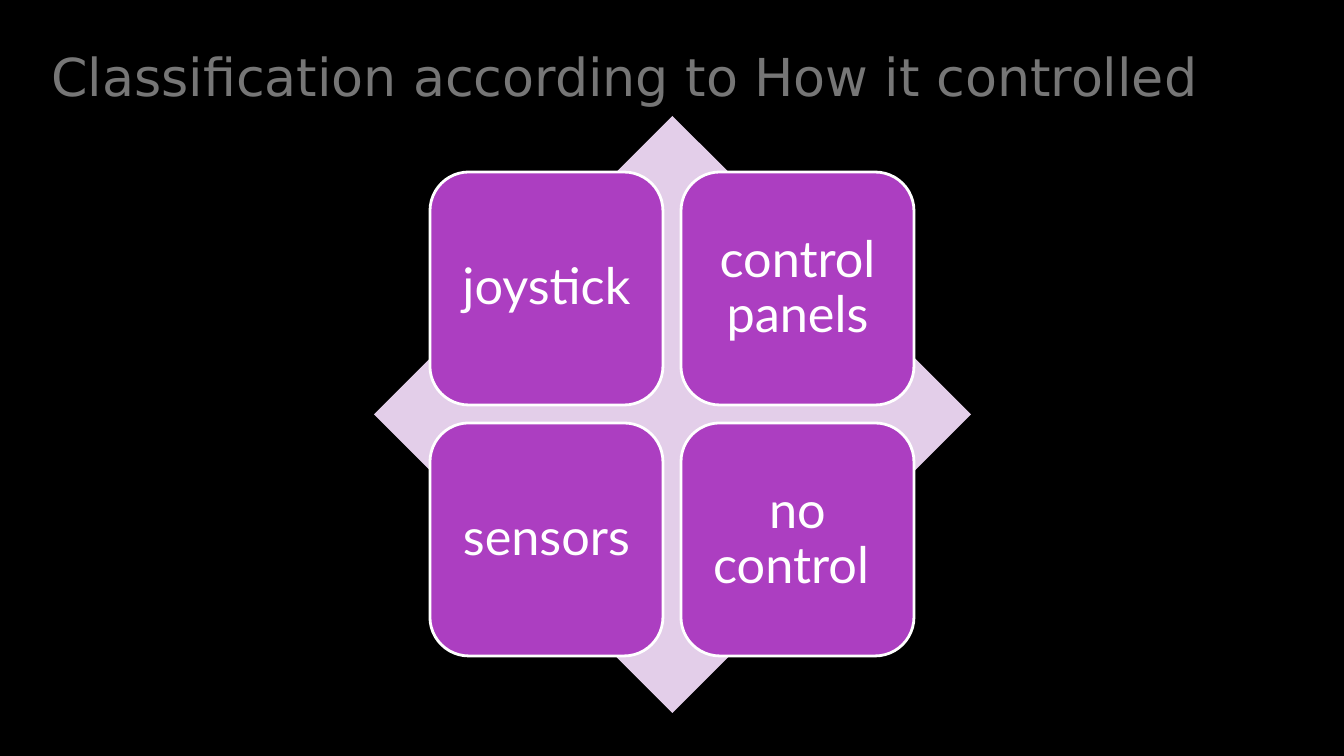
from pptx import Presentation
from pptx.dml.color import RGBColor
from pptx.enum.shapes import MSO_SHAPE as Kind
from pptx.enum.text import MSO_ANCHOR as Anchor, PP_ALIGN as Align
from pptx.util import Emu, Pt

SCALE = 914400 / 134.4
COLORS = {
    "back": "000000",
    "title": "767676",
    "diamond": "E3CEE9",
    "tile": "AC3EC1",
    "white": "FFFFFF",
}
LABELS = ["joystick", "control panels", "sensors", "no control "]
LEFT, TOP, SIDE, STEP = 430, 172, 233, 251


def px(count):
    return Emu(round(count * SCALE))


def color(name):
    return RGBColor.from_string(COLORS[name])


def style(run, font, size, tone):
    run.font.name = font
    run.font.size = Pt(size)
    run.font.color.rgb = color(tone)


def add_title(slide, text):
    box = slide.shapes.add_textbox(px(24), px(34), px(1215), px(82))
    box.text_frame.word_wrap = True
    para = box.text_frame.paragraphs[0]
    for part, font, size in ((" ", "Lato", 30), (text, "DejaVu Sans", 28)):
        run = para.add_run()
        run.text = part
        style(run, font, size, "title")


def add_block(slide, kind, left, top, side, tone):
    block = slide.shapes.add_shape(kind, px(left), px(top), px(side), px(side))
    block.shadow.inherit = False
    block.fill.solid()
    block.fill.fore_color.rgb = color(tone)
    block.line.fill.background()
    return block


def add_tile(slide, left, top, label):
    tile = add_block(slide, Kind.ROUNDED_RECTANGLE, left, top, SIDE, "tile")
    tile.line.color.rgb = color("white")
    tile.line.width = Pt(1.5)
    frame = tile.text_frame
    frame.text = label
    frame.word_wrap = True
    frame.vertical_anchor = Anchor.MIDDLE
    frame.margin_left = frame.margin_right = px(15)
    frame.margin_top = frame.margin_bottom = px(15)
    para = frame.paragraphs[0]
    para.alignment = Align.CENTER
    para.line_spacing = 0.9
    style(para.runs[0], "Lato", 27, "white")


def main():
    deck = Presentation()
    deck.slide_width, deck.slide_height = px(1344), px(756)
    slide = deck.slides.add_slide(deck.slide_layouts[6])
    slide.background.fill.solid()
    slide.background.fill.fore_color.rgb = color("back")

    add_title(slide, "Classification according to How it controlled")
    add_block(slide, Kind.DIAMOND, 374, 116, 597, "diamond")
    for index, label in enumerate(LABELS):
        row, col = divmod(index, 2)
        add_tile(slide, LEFT + col * STEP, TOP + row * STEP, label)

    deck.save("out.pptx")


if __name__ == "__main__":
    main()
